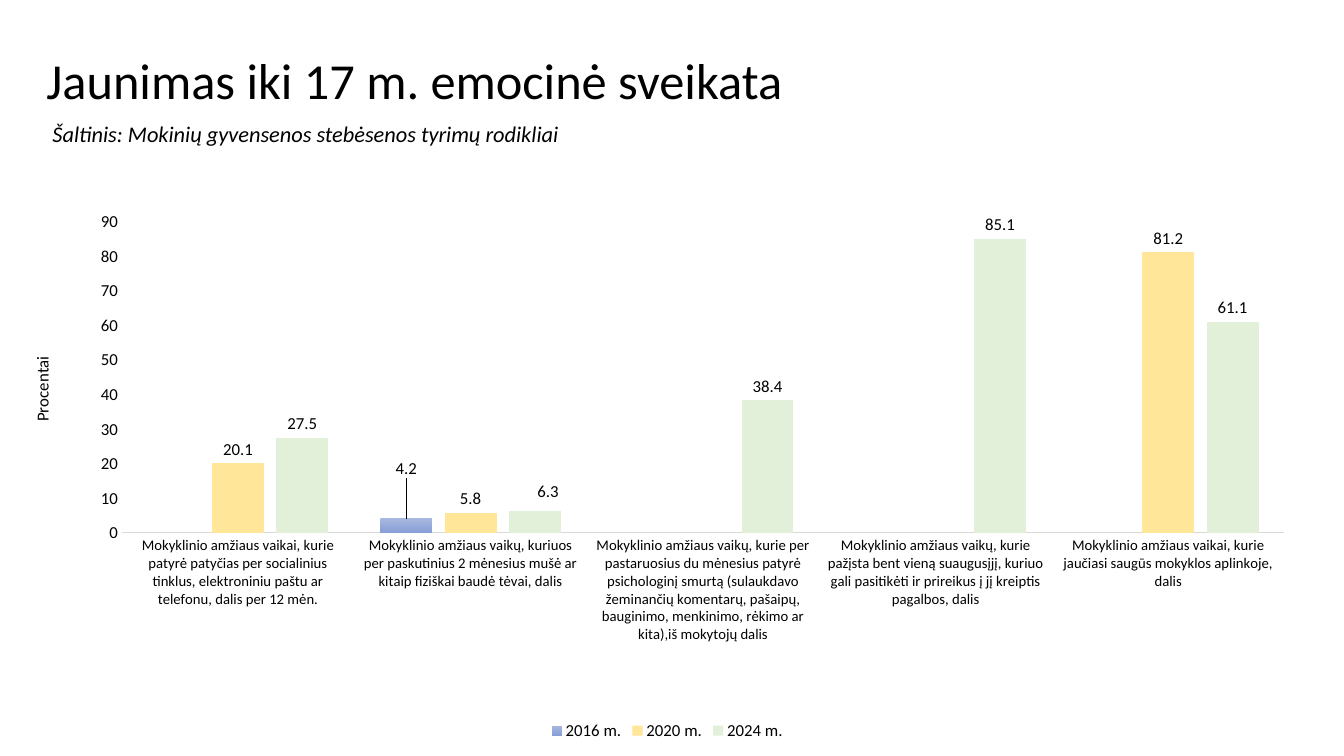
from lxml import etree
from pptx import Presentation
from pptx.chart.data import CategoryChartData
from pptx.dml.color import RGBColor
from pptx.enum.chart import (XL_CHART_TYPE, XL_LABEL_POSITION,
                             XL_LEGEND_POSITION, XL_TICK_MARK)
from pptx.enum.text import MSO_ANCHOR, PP_ALIGN
from pptx.oxml.ns import qn
from pptx.util import Inches, Pt

FONT = "Calibri"
BLACK = RGBColor(0x00, 0x00, 0x00)
AXIS_GREY = RGBColor(0xD9, 0xD9, 0xD9)
BLUE_LIGHT = RGBColor(0xA8, 0xB7, 0xDF)
BLUE_DARK = RGBColor(0x88, 0x9E, 0xD7)
YELLOW = RGBColor(0xFF, 0xE6, 0x99)
GREEN = RGBColor(0xE2, 0xF0, 0xD9)

SLIDE_WIDTH, SLIDE_HEIGHT = Inches(13.33), Inches(7.5)

# Places as shares of the slide: left, top, width, height
TITLE_AREA = (0.027, 0.032, 0.812, 0.157)
SOURCE_AREA = (0.0315, 0.156, 0.897, 0.045)
CHART_AREA = (0.011, 0.201, 0.971, 0.784)

CATEGORIES = [
    "Mokyklinio amžiaus vaikai, kurie patyrė patyčias per socialinius tinklus, "
    "elektroniniu paštu ar telefonu, dalis per 12 mėn.",
    "Mokyklinio amžiaus vaikų, kuriuos per paskutinius 2 mėnesius mušė ar "
    "kitaip fiziškai baudė tėvai, dalis",
    "Mokyklinio amžiaus vaikų, kurie per pastaruosius du mėnesius patyrė "
    "psichologinį smurtą (sulaukdavo žeminančių komentarų, pašaipų, bauginimo, "
    "menkinimo, rėkimo ar kita),iš mokytojų dalis",
    "Mokyklinio amžiaus vaikų, kurie pažįsta bent vieną suaugusįjį, kuriuo "
    "gali pasitikėti ir prireikus į jį kreiptis pagalbos, dalis",
    "Mokyklinio amžiaus vaikai, kurie jaučiasi saugūs mokyklos aplinkoje, dalis",
]
# Name, values, fill colours (two make a gradient), moved labels by point
SERIES = [
    ("2016 m.", (None, 4.2, None, None, None), (BLUE_LIGHT, BLUE_DARK),
     {1: (0, -0.06)}),
    ("2020 m.", (20.1, 5.8, None, None, 81.2), (YELLOW,), {}),
    ("2024 m.", (27.5, 6.3, 38.4, 85.1, 61.1), (GREEN,), {1: (0.01, -0.01)}),
]


def place(shape, area):
    left, top, width, height = area
    shape.left, shape.width = int(left * SLIDE_WIDTH), int(width * SLIDE_WIDTH)
    shape.top, shape.height = int(top * SLIDE_HEIGHT), int(height * SLIDE_HEIGHT)


def style_font(font, size, italic=False):
    font.name, font.size = FONT, Pt(size)
    font.bold, font.italic = False, italic
    font.color.rgb = BLACK


def fill_placeholder(box, area, text, size, anchor, italic=False):
    place(box, area)
    frame = box.text_frame
    frame.vertical_anchor = anchor
    para = frame.paragraphs[0]
    properties = para._p.get_or_add_pPr()
    properties.set("marL", "0")
    properties.set("indent", "0")
    etree.SubElement(properties, qn("a:buNone"))
    para.alignment = PP_ALIGN.LEFT
    para.line_spacing, para.space_before = 0.9, Pt(0)
    span = para.add_run()
    span.text = text
    style_font(span.font, size, italic)


def manual_layout(**settings):
    """Build a c:layout element from its settings, given in schema order."""
    layout = etree.Element(qn("c:layout"))
    manual = etree.SubElement(layout, qn("c:manualLayout"))
    for name, value in settings.items():
        etree.SubElement(manual, qn("c:" + name)).set("val", str(value))
    return layout


def set_layout(parent, previous_tag, layout):
    for old in parent.findall(qn("c:layout")):
        parent.remove(old)
    previous = parent.find(qn(previous_tag)) if previous_tag else None
    if previous is None:
        parent.insert(0, layout)
    else:
        previous.addnext(layout)


def style_series(series, colours, moved_labels):
    fill = series.format.fill
    if len(colours) == 1:
        fill.solid()
        fill.fore_color.rgb = colours[0]
    else:
        fill.gradient()
        fill.gradient_angle = 270
        for stop, colour in zip(fill.gradient_stops, colours):
            stop.color.rgb = colour
    series.invert_if_negative = False
    labels = series.data_labels
    labels.show_value = True
    labels.position = XL_LABEL_POSITION.OUTSIDE_END
    style_font(labels.font, 12)
    for point, (across, down) in moved_labels.items():
        label = series.points[point].data_label
        style_font(label.font, 12)
        label.position = XL_LABEL_POSITION.OUTSIDE_END
        element = labels._element.find(qn("c:dLbl"))
        set_layout(element, "c:idx", manual_layout(x=across, y=down))


def style_axes(chart):
    for axis, size in ((chart.category_axis, 10.5), (chart.value_axis, 12)):
        axis.major_tick_mark = axis.minor_tick_mark = XL_TICK_MARK.NONE
        axis.has_major_gridlines = False
        style_font(axis.tick_labels.font, size)
    line = chart.category_axis.format.line
    line.color.rgb, line.width = AXIS_GREY, Pt(0.75)

    values = chart.value_axis
    values.format.line.fill.background()
    values.minimum_scale, values.maximum_scale, values.major_unit = 0, 90, 10
    span = values.axis_title.text_frame.paragraphs[0].add_run()
    span.text = "Procentai"
    style_font(span.font, 12)
    set_layout(values.axis_title._element, "c:tx",
               manual_layout(xMode="edge", yMode="edge", x=0.01, y=0.34))


def add_column_chart(slide):
    data = CategoryChartData(number_format="General")
    data.categories = CATEGORIES
    for name, values, _, _ in SERIES:
        data.add_series(name, values)
    frame = slide.shapes.add_chart(XL_CHART_TYPE.COLUMN_CLUSTERED,
                                   0, 0, SLIDE_WIDTH, SLIDE_HEIGHT, data)
    place(frame, CHART_AREA)
    chart = frame.chart
    style_font(chart.font, 10)
    chart.has_title = False

    # Columns
    plot = chart.plots[0]
    plot.gap_width, plot.overlap, plot.vary_by_categories = 100, -24, False
    for series, (_, _, colours, moved_labels) in zip(plot.series, SERIES):
        style_series(series, colours, moved_labels)
    style_axes(chart)
    plot_area = chart._chartSpace.chart.plotArea
    set_layout(plot_area, None, manual_layout(
        layoutTarget="inner", xMode="edge", yMode="edge",
        x=0.082, y=0.118, w=0.891, h=0.525))

    # Legend
    chart.has_legend = True
    chart.legend.position = XL_LEGEND_POSITION.BOTTOM
    chart.legend.include_in_layout = False
    style_font(chart.legend.font, 12)


def main():
    deck = Presentation()
    deck.slide_width, deck.slide_height = SLIDE_WIDTH, SLIDE_HEIGHT
    slide = deck.slides.add_slide(deck.slide_layouts[1])

    # Heading and source line
    fill_placeholder(slide.shapes.title, TITLE_AREA,
                     "Jaunimas iki 17 m. emocinė sveikata", 36, MSO_ANCHOR.MIDDLE)
    fill_placeholder(slide.placeholders[1], SOURCE_AREA,
                     "Šaltinis: Mokinių gyvensenos stebėsenos tyrimų rodikliai",
                     16, MSO_ANCHOR.TOP, italic=True)

    add_column_chart(slide)
    deck.save("out.pptx")


if __name__ == "__main__":
    main()
